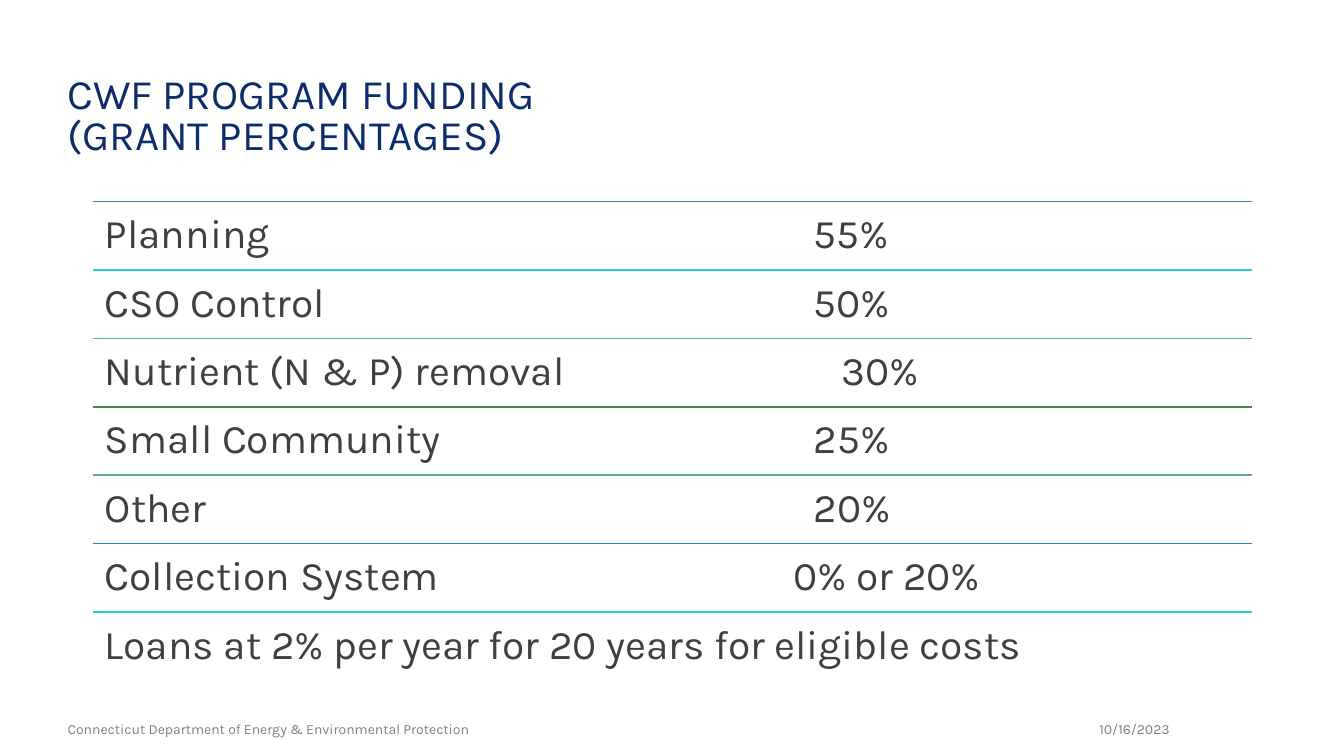
from dataclasses import dataclass

from lxml import etree
from pptx import Presentation
from pptx.dml.color import RGBColor
from pptx.enum.shapes import MSO_CONNECTOR
from pptx.enum.text import MSO_ANCHOR, MSO_AUTO_SIZE, PP_ALIGN
from pptx.oxml.ns import qn
from pptx.util import Inches, Pt

TOP, MIDDLE = MSO_ANCHOR.TOP, MSO_ANCHOR.MIDDLE
LEFT, RIGHT = PP_ALIGN.LEFT, PP_ALIGN.RIGHT
NO_AUTOFIT = MSO_AUTO_SIZE.NONE
STRAIGHT = MSO_CONNECTOR.STRAIGHT

FONT = "Karla"
COLORS = {
    "navy": "0D2C6C", "text": "3F3F3F", "gray": "808080", "blue": "2683C6",
    "cyan": "27CED7", "mint": "42BA97", "green": "3E8853", "sage": "62A39F",
}

# Grid of the funding list, in inches
SLIDE_WIDTH, SLIDE_HEIGHT = 13.33, 7.5
MARGIN = 0.67
LIST_LEFT, LIST_TOP = 0.92, 2.0
LIST_WIDTH, LIST_HEIGHT = 11.5, 4.75
CELL_INSET = 0.12
VALUE_TAB = 7.03
FOOTER_TOP, FOOTER_HEIGHT = 7.08, 0.3


@dataclass
class FundingRow:
    label: str
    color: str
    value: str = ""
    tab: float = VALUE_TAB


@dataclass
class FooterItem:
    text: str
    left: float
    width: float
    alignment: PP_ALIGN


ROWS = [
    FundingRow("Planning", "blue", "55%"),
    FundingRow("CSO Control", "cyan", "50%"),
    FundingRow("Nutrient (N & P) removal", "mint", "30%", 7.31),
    FundingRow("Small Community", "green", "25%"),
    FundingRow("Other", "sage", "20%"),
    FundingRow("Collection System", "blue", "0% or 20%", 6.83),
    FundingRow("Loans at 2% per year for 20 years for eligible costs", "cyan"),
]
FOOTERS = [
    FooterItem("10/16/2023", 9.24, 2.36, RIGHT),
    FooterItem("Connecticut Department of Energy & Environmental Protection",
               MARGIN, 6.45, LEFT),
]


def place(shape, left: float, top: float, width: float, height: float) -> None:
    shape.left, shape.top = Inches(left), Inches(top)
    shape.width, shape.height = Inches(width), Inches(height)


def set_frame(shape, inset: float, anchor: MSO_ANCHOR) -> None:
    frame = shape.text_frame
    frame.word_wrap = True
    frame.auto_size = NO_AUTOFIT
    frame.vertical_anchor = anchor
    frame.margin_left = frame.margin_right = Inches(inset)
    frame.margin_top = frame.margin_bottom = Inches(inset)


def add_run(paragraph, text: str, size: float, color: str) -> None:
    run = paragraph.add_run()
    run.text = text
    run.font.name = FONT
    run.font.size = Pt(size)
    run.font.color.rgb = RGBColor.from_string(COLORS[color])


def add_text_box(slide, left: float, top: float, width: float, height: float,
                 inset: float, anchor: MSO_ANCHOR):
    shape = slide.shapes.add_textbox(0, 0, 0, 0)
    place(shape, left, top, width, height)
    set_frame(shape, inset, anchor)
    return shape.text_frame.paragraphs[0]


def add_title(slide, lines: list[str]) -> None:
    title = slide.shapes.title
    place(title, MARGIN, 0.77, SLIDE_WIDTH - 2 * MARGIN, 0.98)
    set_frame(title, 0, TOP)
    paragraph = title.text_frame.paragraphs[0]
    paragraph.alignment = LEFT
    paragraph.line_spacing = 0.8
    for index, line in enumerate(lines):
        if index:
            paragraph.add_line_break()
        add_run(paragraph, line, 30, "navy")


def add_rule(slide, top: float, color: str) -> None:
    rule = slide.shapes.add_connector(
        STRAIGHT, Inches(LIST_LEFT), Inches(top),
        Inches(LIST_LEFT + LIST_WIDTH), Inches(top))
    rule.line.color.rgb = RGBColor.from_string(COLORS[color])
    rule.line.width = Pt(1.25)
    etree.SubElement(rule._element.spPr, qn("a:effectLst"))


def add_tab_stop(paragraph, position: float) -> None:
    tabs = etree.SubElement(paragraph._p.get_or_add_pPr(), qn("a:tabLst"))
    etree.SubElement(tabs, qn("a:tab"), pos=str(Inches(position)), algn="l")


def add_funding_row(slide, row: FundingRow, top: float, height: float) -> None:
    add_rule(slide, top, row.color)
    paragraph = add_text_box(slide, LIST_LEFT, top, LIST_WIDTH, height,
                             CELL_INSET, TOP)
    if row.value:
        add_tab_stop(paragraph, row.tab)
    paragraph.line_spacing = 0.9
    add_run(paragraph, row.label, 29, "text")
    if row.value:
        add_run(paragraph, "\t" + row.value, 29, "text")


def main() -> None:
    presentation = Presentation()
    presentation.slide_width = Inches(SLIDE_WIDTH)
    presentation.slide_height = Inches(SLIDE_HEIGHT)
    slide = presentation.slides.add_slide(presentation.slide_layouts[5])

    # Title
    add_title(slide, ["CWF PROGRAM FUNDING", "(GRANT PERCENTAGES)"])

    # Date and department
    for item in FOOTERS:
        paragraph = add_text_box(slide, item.left, FOOTER_TOP, item.width,
                                 FOOTER_HEIGHT, 0, MIDDLE)
        paragraph.alignment = item.alignment
        add_run(paragraph, item.text, 10, "gray")

    # Funding list
    row_height = LIST_HEIGHT / len(ROWS)
    for index, row in enumerate(ROWS):
        add_funding_row(slide, row, LIST_TOP + index * row_height, row_height)

    presentation.save("out.pptx")


if __name__ == "__main__":
    main()
